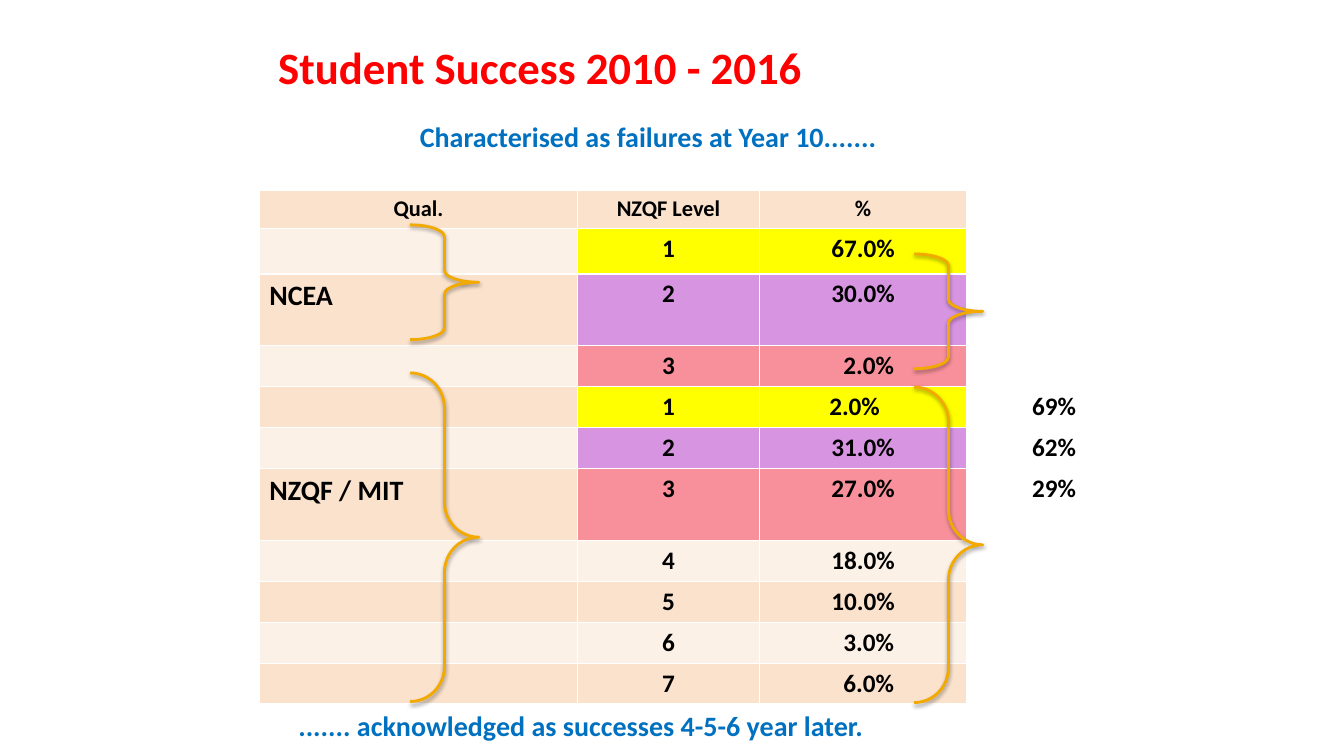
"""Builds the slide on student success by qualification and NZQF level."""
from lxml import etree
from pptx import Presentation
from pptx import util as u
from pptx.dml.color import RGBColor
from pptx.enum import shapes, text
from pptx.oxml import ns

RED = RGBColor(0xFF, 0x00, 0x00)
BLUE = RGBColor(0x00, 0x70, 0xC0)
BLACK = RGBColor(0x00, 0x00, 0x00)
WHITE = RGBColor(0xFF, 0xFF, 0xFF)
PEACH = RGBColor(0xFA, 0xE2, 0xCC)
CREAM = RGBColor(0xFC, 0xF1, 0xE7)
YELLOW = RGBColor(0xFF, 0xFF, 0x00)
PURPLE = RGBColor(0xD7, 0x94, 0xE1)
PINK = RGBColor(0xF8, 0x90, 0x9B)
GOLD = RGBColor(0xF2, 0xA9, 0x00)

LEFT, CENTER = text.PP_ALIGN.LEFT, text.PP_ALIGN.CENTER
LEVEL_FILLS = {"1": YELLOW, "2": PURPLE, "3": PINK}
COLUMN_WIDTHS = [227.5, 129.6, 148.3, 104.4]
SUBTITLE_HEIGHT, HEADER_HEIGHT, FIRST_HEIGHT = 52.9, 27.5, 32.5
ROW_HEIGHT, NAMED_HEIGHT = 29.2, 51.4
CELL_MARGIN = 7.2

RESULTS = [
    ("", "1", "67.0%", ""),
    ("NCEA", "2", "30.0%", ""),
    ("", "3", "2.0%", ""),
    ("", "1", "2.0%", "69%"),
    ("", "2", "31.0%", "62%"),
    ("NZQF / MIT", "3", "27.0%", "29%"),
    ("", "4", "18.0%", ""),
    ("", "5", "10.0%", ""),
    ("", "6", "3.0%", ""),
    ("", "7", "6.0%", ""),
]
PERCENT_SHIFTS = {2: 8.2, 3: -12, 8: 8.2, 9: 8.2}
BRACES = [
    (293, 160.6, 82, 0.174),
    (293, 266.4, 234.7, 0.509),
    (653, 276.5, 225.4, 0.509),
    (653, 181.4, 82, 0.174),
]


class SlideBuilder:
    """Holds the style and the current slide."""

    font_name = "Calibri"

    def __init__(self, presentation):
        """Add a slide with a title."""
        self.slide = presentation.slides.add_slide(presentation.slide_layouts[5])

    def add_words(self, paragraph, words, size, color, alignment=LEFT):
        """Add one bold run, or size the paragraph if there are no words."""
        paragraph.alignment = alignment
        if not words:
            ending = etree.SubElement(paragraph._p, ns.qn("a:endParaRPr"))
            ending.set("sz", str(size * 100))
            return
        run = paragraph.add_run()
        run.text = words
        run.font.name = self.font_name
        run.font.size = u.Pt(size)
        run.font.bold = True
        run.font.color.rgb = color

    def title(self, words, left, top, width, height, indent):
        """Place and fill the title placeholder."""
        shape = self.slide.shapes.title
        shape.left, shape.top = u.Pt(left), u.Pt(top)
        shape.width, shape.height = u.Pt(width), u.Pt(height)
        frame = shape.text_frame
        frame.auto_size = text.MSO_AUTO_SIZE.NONE
        frame.vertical_anchor = text.MSO_ANCHOR.MIDDLE
        frame.margin_left = u.Pt(indent)
        self.add_words(frame.paragraphs[0], words, 32, RED)

    def text_box(self, words, left, top, width, height):
        """Add a line of blue text."""
        shape = self.slide.shapes.add_textbox(
            u.Pt(left), u.Pt(top), u.Pt(width), u.Pt(height))
        shape.text_frame.word_wrap = True
        self.add_words(shape.text_frame.paragraphs[0], words, 20, BLUE)

    def table(self, left, top, widths, heights):
        """Add a plain table with white borders."""
        frame = self.slide.shapes.add_table(
            len(heights), len(widths), u.Pt(left), u.Pt(top),
            u.Pt(sum(widths)), u.Pt(sum(heights)))
        table = frame.table
        table.first_row = table.horz_banding = False
        for column, width in zip(table.columns, widths):
            column.width = u.Pt(width)
        for row, height in zip(table.rows, heights):
            row.height = u.Pt(height)
        for cell in table.iter_cells():
            self.borders(cell)
            cell.fill.background()
        return table

    def borders(self, cell):
        """Draw white lines around a cell."""
        properties = cell._tc.get_or_add_tcPr()
        for side in ("L", "R", "T", "B"):
            line = etree.SubElement(properties, ns.qn(f"a:ln{side}"), w=str(u.Pt(1)))
            fill = etree.SubElement(line, ns.qn("a:solidFill"))
            etree.SubElement(fill, ns.qn("a:srgbClr"), val=str(WHITE))

    def cell(self, cell, words, size, alignment=CENTER, fill=None, color=BLACK, shift=0):
        """Fill a cell, moving its text by widening one margin."""
        cell.margin_left = u.Pt(CELL_MARGIN + max(shift, 0))
        cell.margin_right = u.Pt(CELL_MARGIN + max(-shift, 0))
        if fill is not None:
            cell.fill.solid()
            cell.fill.fore_color.rgb = fill
        self.add_words(cell.text_frame.paragraphs[0], words, size, color, alignment)

    def brace(self, left, top, height, curve):
        """Add a gold right brace with a soft shadow."""
        shape = self.slide.shapes.add_shape(
            shapes.MSO_SHAPE.RIGHT_BRACE, u.Pt(left), u.Pt(top), u.Pt(49), u.Pt(height))
        shape.adjustments[0] = curve
        shape.fill.background()
        shape.line.color.rgb = GOLD
        shape.line.width = u.Pt(2)
        shape.shadow.inherit = False
        effects = shape._element.spPr.find(ns.qn("a:effectLst"))
        shadow = etree.SubElement(
            effects, ns.qn("a:outerShdw"), blurRad=str(u.Pt(3.1)),
            dist=str(u.Pt(1.6)), dir="5400000", rotWithShape="0")
        tint = etree.SubElement(shadow, ns.qn("a:srgbClr"), val=str(BLACK))
        etree.SubElement(tint, ns.qn("a:alpha"), val="38000")


def add_results(builder):
    """Add the table of results."""
    heights = [NAMED_HEIGHT if name else ROW_HEIGHT for name, *_ in RESULTS]
    heights[0] = FIRST_HEIGHT
    table = builder.table(
        185.2, 82.8, COLUMN_WIDTHS, [SUBTITLE_HEIGHT, HEADER_HEIGHT, *heights])
    table.cell(0, 0).merge(table.cell(0, 3))
    builder.cell(table.cell(0, 0), "Characterised as failures at Year 10.......", 20,
                 LEFT, color=BLUE, shift=107.5)
    for column, words in enumerate(["Qual.", "NZQF Level", "%", ""]):
        builder.cell(table.cell(1, column), words, 16, fill=PEACH if words else None)
    for index, (name, level, percent, total) in enumerate(RESULTS):
        cells = table.rows[index + 2].cells
        band = PEACH if index % 2 else CREAM
        fill = LEVEL_FILLS.get(level, band)
        builder.cell(cells[0], name, 20 if name else 18, LEFT, band)
        builder.cell(cells[1], level, 18, fill=fill)
        builder.cell(cells[2], percent, 18, fill=fill, shift=PERCENT_SHIFTS.get(index, 0))
        builder.cell(cells[3], total, 18)


def main():
    """Build and save the slide."""
    presentation = Presentation()
    presentation.slide_width, presentation.slide_height = u.Pt(960), u.Pt(540)
    builder = SlideBuilder(presentation)
    builder.title("Student Success 2010 - 2016", 156.2, 21.6, 648, 52.6, 42.5)
    add_results(builder)
    for brace in BRACES:
        builder.brace(*brace)
    builder.text_box("....... acknowledged as successes 4-5-6 year later.",
                     206, 502.6, 454.3, 31.7)
    presentation.save("out.pptx")


if __name__ == "__main__":
    main()
